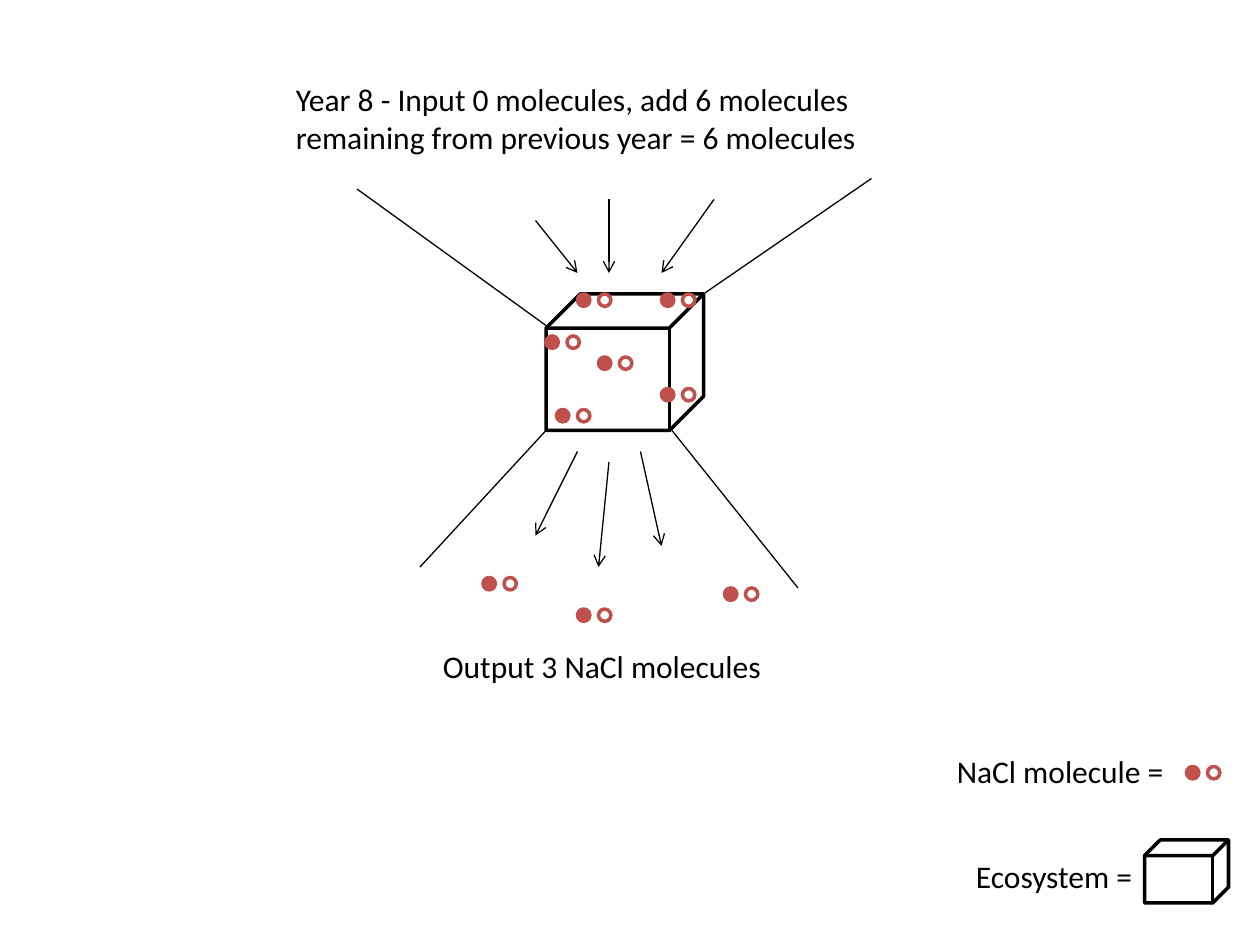
import dataclasses

import lxml.etree
import pptx
import pptx.dml.color
import pptx.enum.shapes
import pptx.enum.text
import pptx.oxml.ns
import pptx.util

STEP = 2.54 / 12  # grid step in cm: twelve to the inch
SHAPE = pptx.enum.shapes.MSO_SHAPE
ALIGN = pptx.enum.text.PP_ALIGN


@dataclasses.dataclass(frozen=True)
class Theme:
    ink: str = "000000"
    salt: str = "C0504D"
    font: str = "Calibri"
    size: int = 18
    thin: float = 0.75
    thick: float = 2
    dot: float = 0.25  # cm


def grid(*steps):
    return [pptx.util.Cm(n * STEP) for n in steps]


def color(code):
    return pptx.dml.color.RGBColor.from_string(code)


class Board:
    def __init__(self, slide, theme):
        self.shapes = slide.shapes
        self.theme = theme

    def stroke(self, item, code, width):
        item.line.color.rgb = color(code)
        item.line.width = pptx.util.Pt(width)

    def form(self, home, kind, box, code, solid=False):
        item = home.add_shape(kind, *box)
        item.shadow.inherit = False
        if solid:
            item.fill.solid()
            item.fill.fore_color.rgb = color(code)
        else:
            item.fill.background()
        self.stroke(item, code, self.theme.thick)

    def cube(self, *box, home=None):
        self.form(home or self.shapes, SHAPE.CUBE, grid(*box), self.theme.ink)

    def pair(self, left, top):
        """Draw one molecule, a dot and a ring, and return its group."""
        group = self.shapes.add_group_shape()
        size = pptx.util.Cm(self.theme.dot)
        for shift, solid in ((0, True), (2, False)):
            box = [*grid(left + shift, top), size, size]
            self.form(group.shapes, SHAPE.OVAL, box, self.theme.salt, solid)
        return group.shapes

    def line(self, *ends, arrow=False):
        item = self.shapes.add_connector(
            pptx.enum.shapes.MSO_CONNECTOR.STRAIGHT, *grid(*ends))
        self.stroke(item, self.theme.ink, self.theme.thin)
        name = pptx.oxml.ns.qn
        if arrow:
            lxml.etree.SubElement(item.line._get_or_add_ln(),
                                  name("a:tailEnd"), type="arrow")
        lxml.etree.SubElement(item._element.spPr, name("a:effectLst"))

    def text(self, words, *box, align=ALIGN.LEFT, home=None):
        item = (home or self.shapes).add_textbox(*grid(*box))
        frame = item.text_frame
        frame.word_wrap = True
        frame.auto_size = pptx.enum.text.MSO_AUTO_SIZE.SHAPE_TO_FIT_TEXT
        para = frame.paragraphs[0]
        para.text = words
        para.alignment = align
        para.font.name = self.theme.font
        para.font.size = pptx.util.Pt(self.theme.size)
        para.font.color.rgb = color(self.theme.ink)


def main():
    deck = pptx.Presentation()
    deck.slide_width, deck.slide_height = grid(120, 90)
    board = Board(deck.slides.add_slide(deck.slide_layouts[6]), Theme())

    # Ecosystem and the edges of its inflow and outflow
    board.cube(52, 28, 15, 13)
    for ends in ((52, 41, 40, 54), (64, 41, 76, 56),
                 (52, 31, 34, 18), (67, 28, 83, 17)):
        board.line(*ends)

    # Arrows in, then arrows out
    for ends in ((51, 21, 55, 26), (58, 19, 58, 26), (68, 19, 63, 26),
                 (55, 43, 51, 51), (61, 43, 63, 52), (58, 44, 57, 54)):
        board.line(*ends, arrow=True)

    # Molecules kept in the ecosystem, then those that leave
    for spot in ((52, 32), (57, 34), (55, 28), (63, 28), (53, 39), (63, 37),
                 (46, 55), (55, 58), (69, 56)):
        board.pair(*spot)

    # Captions
    board.text("Year 8 - Input 0 molecules, add 6 molecules remaining "
               "from previous year = 6 molecules", 27, 7, 61, 8.5)
    board.text("Output 3 NaCl molecules", 41, 61, 34, 4.8)

    # Key
    salt = board.pair(113, 73)
    board.text("NaCl molecule =", 87, 71, 25, 4.8,
               align=ALIGN.RIGHT, home=salt)
    system = board.shapes.add_group_shape().shapes
    board.cube(109, 80, 8, 6, home=system)
    board.text("Ecosystem =", 91, 81, 18, 4.8,
               align=ALIGN.RIGHT, home=system)

    deck.save("out.pptx")


if __name__ == "__main__":
    main()
